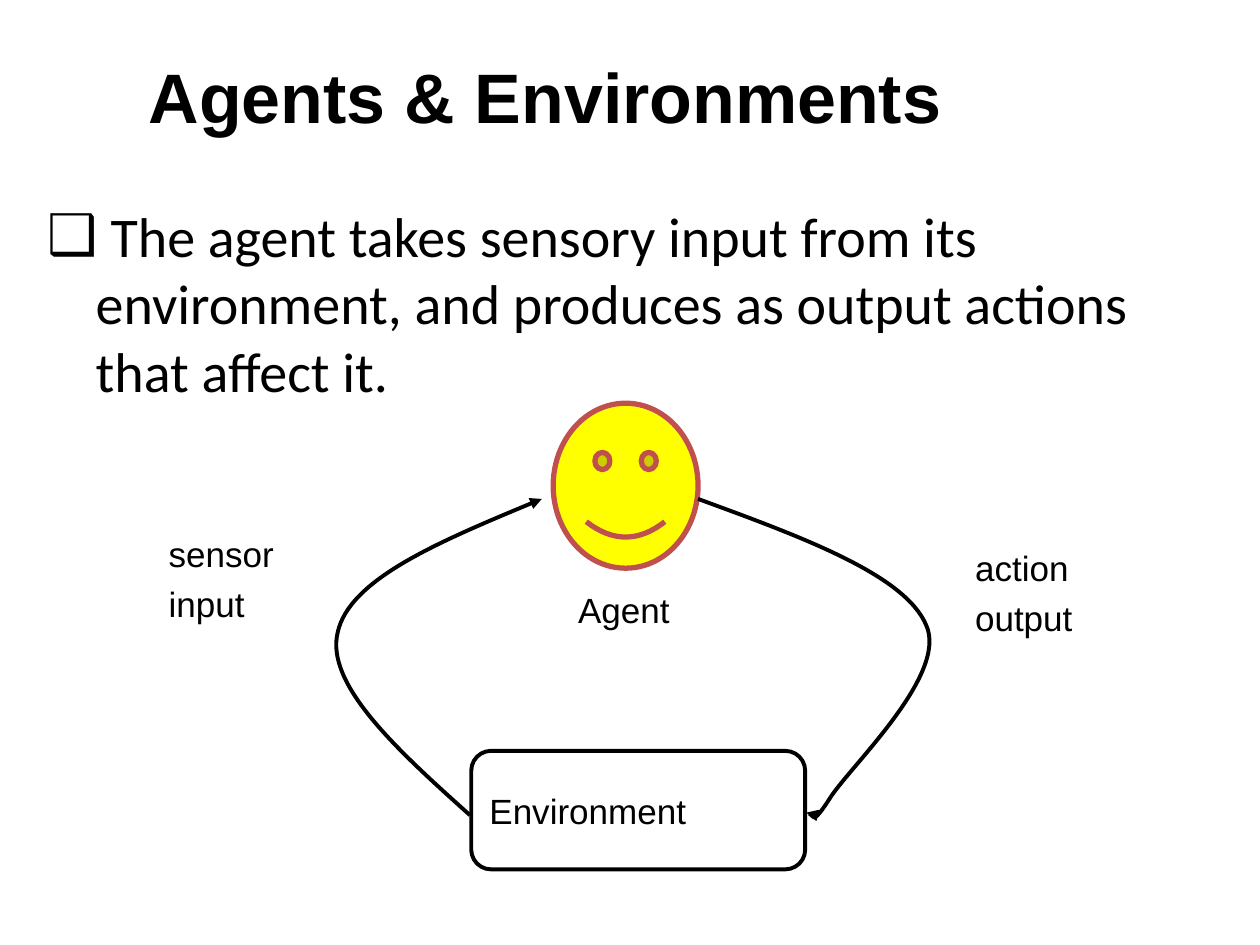
from dataclasses import dataclass

from lxml import etree
from pptx import Presentation
from pptx.dml.color import RGBColor
from pptx.enum.shapes import MSO_SHAPE
from pptx.enum.text import MSO_ANCHOR, MSO_AUTO_SIZE, PP_ALIGN
from pptx.oxml.ns import qn
from pptx.util import Emu, Pt

SMILEY, ROUNDED = MSO_SHAPE.SMILEY_FACE, MSO_SHAPE.ROUNDED_RECTANGLE
TOP, MIDDLE = MSO_ANCHOR.TOP, MSO_ANCHOR.MIDDLE
LEFT = PP_ALIGN.LEFT
NO_AUTOFIT = MSO_AUTO_SIZE.NONE
EMU_PER_PX = 9144  # 100 px to the inch
TITLE_AND_CONTENT = 1


def px(length):
    return Emu(length * EMU_PER_PX)


@dataclass(frozen=True)
class Theme:
    ink: RGBColor = RGBColor(0x00, 0x00, 0x00)
    paper: RGBColor = RGBColor(0xFF, 0xFF, 0xFF)
    face: RGBColor = RGBColor(0xFF, 0xFF, 0x00)
    face_line: RGBColor = RGBColor(0xC0, 0x50, 0x4D)
    heading_font: str = "Arial"
    body_font: str = "Calibri"
    title_size: int = 40
    body_size: int = 32
    label_size: int = 20
    label_gap: float = 4.6
    thick: float = 3
    thin: float = 2.25


class SlideBuilder:
    """Holds the theme and the slide being drawn."""

    def __init__(self, slide, theme):
        self.slide = slide
        self.theme = theme

    def _place(self, shape, box):
        shape.left, shape.top, shape.width, shape.height = map(px, box)

    def _write(self, frame, text, font, size, bold=False, anchor=TOP):
        frame.text = text
        frame.vertical_anchor = anchor
        for paragraph in frame.paragraphs:
            paragraph.alignment = LEFT
            for run in paragraph.runs:
                run.font.name = font
                run.font.size = Pt(size)
                run.font.bold = bold
                run.font.color.rgb = self.theme.ink

    def _write_label(self, frame, text, anchor=TOP):
        self._write(frame, text, self.theme.heading_font, self.theme.label_size, anchor=anchor)
        for paragraph in frame.paragraphs:
            paragraph.space_before = Pt(self.theme.label_gap)

    def _outline(self, shape, color, width):
        shape.shadow.inherit = False
        shape.line.color.rgb = color
        shape.line.width = Pt(width)

    def title(self, box, text):
        heading = self.slide.shapes.title
        self._place(heading, box)
        self._write(heading.text_frame, text, self.theme.heading_font,
                    self.theme.title_size, bold=True, anchor=MIDDLE)
        heading.text_frame.auto_size = NO_AUTOFIT

    def bullet(self, box, text, mark, indent):
        body = self.slide.placeholders[1]
        self._place(body, box)
        self._write(body.text_frame, text, self.theme.body_font, self.theme.body_size)
        body.text_frame.auto_size = NO_AUTOFIT
        properties = body.text_frame.paragraphs[0]._p.get_or_add_pPr()
        properties.set("marL", str(px(indent)))
        properties.set("indent", str(-px(indent)))
        etree.SubElement(properties, qn("a:buChar")).set("char", mark)

    def shape(self, preset, box, adjustment, fill, line, width, text=""):
        shape = self.slide.shapes.add_shape(preset, *map(px, box))
        shape.adjustments[0] = adjustment
        shape.fill.solid()
        shape.fill.fore_color.rgb = fill
        self._outline(shape, line, width)
        if text:
            self._write_label(shape.text_frame, text, MIDDLE)

    def label(self, box, text):
        frame = self.slide.shapes.add_textbox(*map(px, box)).text_frame
        frame.word_wrap = False
        self._write_label(frame, text)

    def curved_arrow(self, start, *controls):
        """Draw Bézier segments from start, three control points to each."""
        builder = self.slide.shapes.build_freeform(*start, scale=EMU_PER_PX)
        builder.add_line_segments(controls, close=False)
        arrow = builder.convert_to_shape()
        arrow.fill.background()
        self._outline(arrow, self.theme.ink, self.theme.thin)
        # The freeform builder knows straight segments only.
        path = arrow._element.find(".//" + qn("a:path"))
        points = [segment[0] for segment in path.findall(qn("a:lnTo"))]
        for segment in path.findall(qn("a:lnTo")):
            path.remove(segment)
        for first in range(0, len(points), 3):
            etree.SubElement(path, qn("a:cubicBezTo")).extend(points[first:first + 3])
        etree.SubElement(arrow.line._get_or_add_ln(), qn("a:tailEnd")).set("type", "triangle")


def main():
    deck = Presentation()
    deck.slide_width, deck.slide_height = px(1000), px(750)
    theme = Theme()
    page = SlideBuilder(deck.slides.add_slide(deck.slide_layouts[TITLE_AND_CONTENT]), theme)

    page.title((108, 36, 785, 80), "Agents & Environments")
    page.bullet(
        (28, 155, 945, 133),
        " The agent takes sensory input from its environment, "
        "and produces as output actions that affect it.",
        mark="❑", indent=38)

    page.shape(SMILEY, (439, 320, 115, 131), 0.047, theme.face, theme.face_line, theme.thick)
    page.shape(ROUNDED, (374, 596, 265, 94), 0.167, theme.paper, theme.ink, theme.thin,
               "Environment")

    page.curved_arrow((554, 396),
                      (636, 426), (718, 456), (735, 496),
                      (753, 535), (675, 608), (659, 633),
                      (643, 658), (633, 637), (640, 645))
    page.curved_arrow((373, 647),
                      (315, 595), (258, 543), (268, 502),
                      (277, 460), (353, 428), (430, 396))

    page.label((124, 418, 111, 83), "sensor\ninput")
    page.label((764, 429, 102, 83), "action\noutput")
    page.label((449, 462, 93, 43), "Agent")

    deck.save("out.pptx")


if __name__ == "__main__":
    main()
